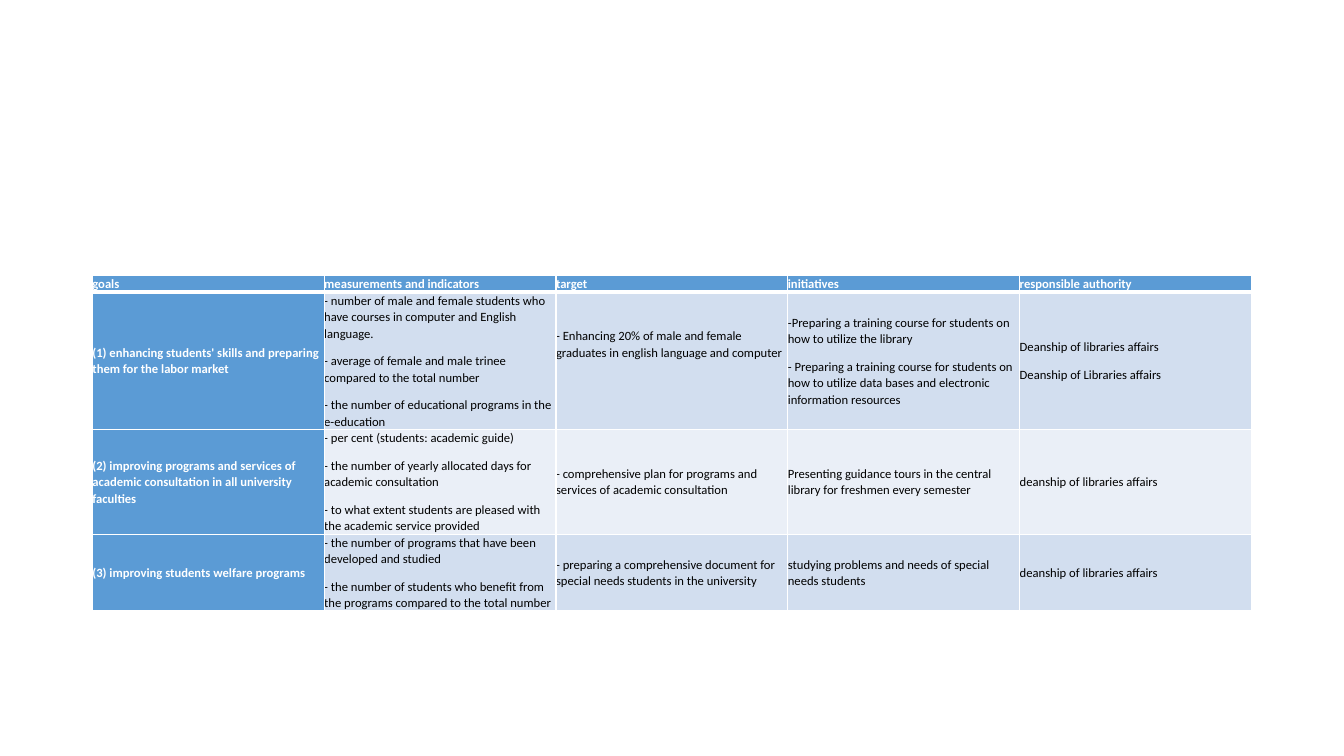
from lxml.etree import SubElement
from pptx import Presentation
from pptx.dml.color import RGBColor
from pptx.enum.text import MSO_ANCHOR
from pptx.oxml.ns import qn
from pptx.util import Pt

COLORS = {"white": "FFFFFF", "black": "000000", "blue": "5B9BD5",
          "band_dark": "D2DEEF", "band_light": "EAEFF7"}
ROW_HEIGHTS = [11.75, 98.5, 74, 54.5]
GOALS = [
    [["goals"], ["measurements and indicators"], ["target"], ["initiatives"],
     ["responsible authority"]],
    [["(1) enhancing students' skills and preparing them for the labor market"],
     ["- number of male and female students who have courses in computer and English language.",
      "- average of female and male trinee compared to the total number",
      "- the number of educational programs in the e-education"],
     ["- Enhancing 20% of male and female graduates in english language and computer"],
     ["-Preparing a training course for students on how to utilize the library",
      "- Preparing a training course for students on how to utilize data bases and "
      "electronic information resources"],
     ["Deanship of libraries affairs", "Deanship of Libraries affairs"]],
    [["(2) improving programs and services of academic consultation in all university faculties"],
     ["- per cent (students: academic guide)",
      "- the number of yearly allocated days for academic consultation",
      "- to what extent students are pleased with the academic service provided"],
     ["- comprehensive plan for programs and services of academic consultation"],
     ["Presenting guidance tours in the central library for freshmen every semester"],
     ["deanship of libraries affairs"]],
    [["(3) improving students welfare programs"],
     ["- the number of programs that have been developed and studied",
      "- the number of students who benefit from the programs compared to the total number"],
     ["- preparing a comprehensive document for special needs students in the university"],
     ["studying problems and needs of special needs students"],
     ["deanship of libraries affairs"]],
]


def rgb(name):
    """Return the named colour."""
    return RGBColor.from_string(COLORS[name])


def set_borders(cell, top, bottom):
    """Draw white borders, with the given top and bottom widths in points."""
    tcPr = cell._tc.get_or_add_tcPr()
    for side, width in (("L", 1), ("R", 1), ("T", top), ("B", bottom)):
        ln = SubElement(tcPr, qn(f"a:ln{side}"), w=str(Pt(width)))
        fill = SubElement(ln, qn("a:solidFill"))
        SubElement(fill, qn("a:srgbClr"), val=COLORS["white"])


def fill_cell(cell, lines, fill, strong):
    """Write the lines into a cell, bold and white where strong."""
    cell.fill.solid()
    cell.fill.fore_color.rgb = rgb(fill)
    cell.vertical_anchor = MSO_ANCHOR.MIDDLE
    cell.margin_left = cell.margin_right = cell.margin_top = cell.margin_bottom = 0
    tf = cell.text_frame
    tf.text = "\n".join(lines)
    for p in tf.paragraphs:
        p.line_spacing = 1.07
        p.space_after = Pt(8)
        p.font.name = "Calibri"
        p.font.size = Pt(9)
        p.font.bold = strong
        p.font.color.rgb = rgb("white" if strong else "black")


def add_goals_table(s, left, top, width):
    """Place the table of goals in the given box."""
    table = s.shapes.add_table(len(GOALS), len(GOALS[0]), Pt(left), Pt(top),
                               Pt(width), Pt(sum(ROW_HEIGHTS))).table
    for r, (row, height) in enumerate(zip(GOALS, ROW_HEIGHTS)):
        table.rows[r].height = Pt(height)
        band = "band_dark" if r % 2 else "band_light"
        for c, lines in enumerate(row):
            strong = r == 0 or c == 0
            cell = table.cell(r, c)
            set_borders(cell, 3 if r == 1 else 1, 3 if r == 0 else 1)
            fill_cell(cell, lines, "blue" if strong else band, strong)
    table.cell(1, 2).margin_bottom = Pt(24)


def main():
    """Build and save the slide."""
    prs = Presentation()
    prs.slide_width, prs.slide_height = Pt(960), Pt(540)
    s = prs.slides.add_slide(prs.slide_layouts[6])
    add_goals_table(s, 66, 196.75, 828)
    prs.save("out.pptx")


if __name__ == "__main__":
    main()
